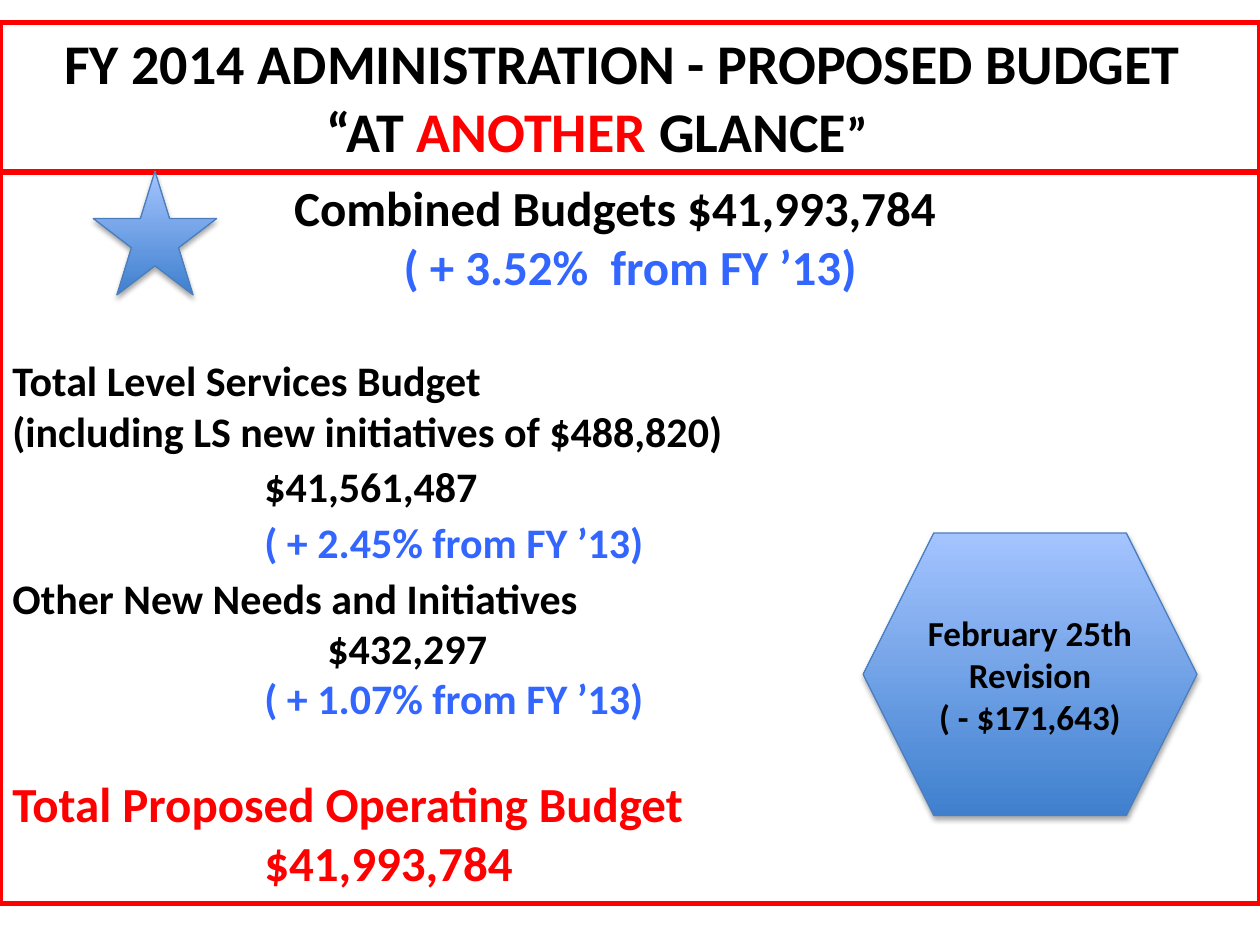
from lxml import etree
from pptx import Presentation
from pptx import util as u
from pptx.dml.color import RGBColor
from pptx.enum import shapes, text
from pptx.oxml.ns import qn

WIDTH, HEIGHT = u.Inches(10), u.Inches(7.5)
COLORS = {"black": "000000", "red": "FF0000", "blue": "3366FF",
          "deep": "3F80CE", "pale": "A4C4FF", "edge": "4B7EBC"}
FONT = {"name": "Calibri", "bold": True}
TAB = 0.5  # inches in one indent level
LEFT, CENTER = text.PP_ALIGN.LEFT, text.PP_ALIGN.CENTER


def color(name):
    return RGBColor.from_string(COLORS[name])


def place(box, left, top, width, height):
    """Return the box covering the given shares of another box."""
    x, y, w, h = box
    return x + w * left, y + h * top, w * width, h * height


def add_shape(page, kind, box, line, weight):
    shape = page.shapes.add_shape(kind, *(u.Emu(round(part)) for part in box))
    shape.shadow.inherit = False
    shape.fill.background()
    shape.line.color.rgb = color(line)
    shape.line.width = u.Pt(weight)
    return shape


def add_glossy(page, kind, box):
    """Add a shape with a vertical gradient and a soft shadow."""
    shape = add_shape(page, kind, box, "edge", 0.75)
    shape.fill.gradient()
    shape.fill.gradient_angle = 90
    for stop, position, name in zip(shape.fill.gradient_stops, (0, 1), ("deep", "pale")):
        stop.position = position
        stop.color.rgb = color(name)
    effects = shape._element.spPr.find(qn("a:effectLst"))
    shadow = etree.SubElement(effects, qn("a:outerShdw"), blurRad=str(u.Pt(3.1)),
                              dist=str(u.Pt(1.8)), dir="5400000", rotWithShape="0")
    tint = etree.SubElement(shadow, qn("a:srgbClr"), val=COLORS["black"])
    etree.SubElement(tint, qn("a:alpha"), val="35000")
    return shape


def write(shape, lines, anchor=text.MSO_ANCHOR.TOP):
    """Fill a shape with lines of (spans, size, paragraph format, indent, right margin)."""
    frame = shape.text_frame
    frame.word_wrap = True
    frame.vertical_anchor = anchor
    for index, (spans, size, layout, indent, right) in enumerate(lines):
        para = frame.add_paragraph() if index else frame.paragraphs[0]
        for name, value in layout.items():
            setattr(para, name, value)
        margins = para._p.get_or_add_pPr()
        margins.set("marL", str(u.Inches(indent)))
        margins.set("marR", str(u.Inches(right)))
        for words, tint, *own_size in spans:
            span = para.add_run()
            span.text = words
            look = FONT | {"size": u.Pt(own_size[0] if own_size else size)}
            for name, value in look.items():
                setattr(span.font, name, value)
            span.font.color.rgb = color(tint)


def line(words, size, tint="black", tabs=0, before=0, after=0):
    layout = {"alignment": LEFT, "space_before": u.Pt(before), "space_after": u.Pt(after)}
    return [(words, tint)], size, layout, tabs * TAB, 0


def centered(spans, size, right=0):
    return spans, size, {"alignment": CENTER}, 0, right


def add_title(page, box):
    frame = add_shape(page, shapes.MSO_SHAPE.RECTANGLE, box, "red", 3)
    write(frame, [
        centered([("FY 2014 ADMINISTRATION - PROPOSED BUDGET", "black")], 32, 0.12),
        centered([("“AT ", "black"), ("ANOTHER ", "red"), ("GLANCE", "black"),
                  ("”", "black", 28)], 32, 0.52),
    ])


def add_budget(page, box):
    frame = add_shape(page, shapes.MSO_SHAPE.RECTANGLE, box, "red", 3)
    write(frame, [
        centered([("Combined Budgets $41,993,784", "black")], 28, 0.24),
        centered([("( + 3.52%  from FY ’13)", "blue")], 28),
        line("Total Level Services Budget", 24, before=34),
        line("(including LS new initiatives of $488,820)", 24, after=3),
        line("$41,561,487", 24, tabs=4, after=3),
        line("( + 2.45% from FY ’13)", 24, "blue", tabs=4, after=3),
        line("Other New Needs and Initiatives", 24),
        line("$432,297", 24, tabs=5),
        line("( + 1.07% from FY ’13)", 24, "blue", tabs=4),
        line("Total Proposed Operating Budget", 28, "red", before=29),
        line("$41,993,784", 28, "red", tabs=4),
    ])


def add_markers(page, box):
    """Add the revision hexagon and the star over the budget box."""
    hexagon = add_glossy(page, shapes.MSO_SHAPE.HEXAGON,
                         place(box, 0.685, 0.494, 0.265, 0.386))
    revision = ("February 25th", "Revision", "( - $171,643)")
    write(hexagon, [centered([(words, "black")], 20) for words in revision],
          text.MSO_ANCHOR.MIDDLE)
    add_glossy(page, shapes.MSO_SHAPE.STAR_5_POINT, place(box, 0.074, 0, 0.098, 0.169))


def main():
    deck = Presentation()
    deck.slide_width, deck.slide_height = WIDTH, HEIGHT
    page = deck.slides.add_slide(deck.slide_layouts[6])
    whole = (0, 0, WIDTH, HEIGHT)
    budget = place(whole, 0, 0.1813, 1, 0.7747)
    add_budget(page, budget)
    add_title(page, place(whole, 0, 0.024, 1, 0.1587))
    add_markers(page, budget)
    deck.save("out.pptx")


if __name__ == "__main__":
    main()
